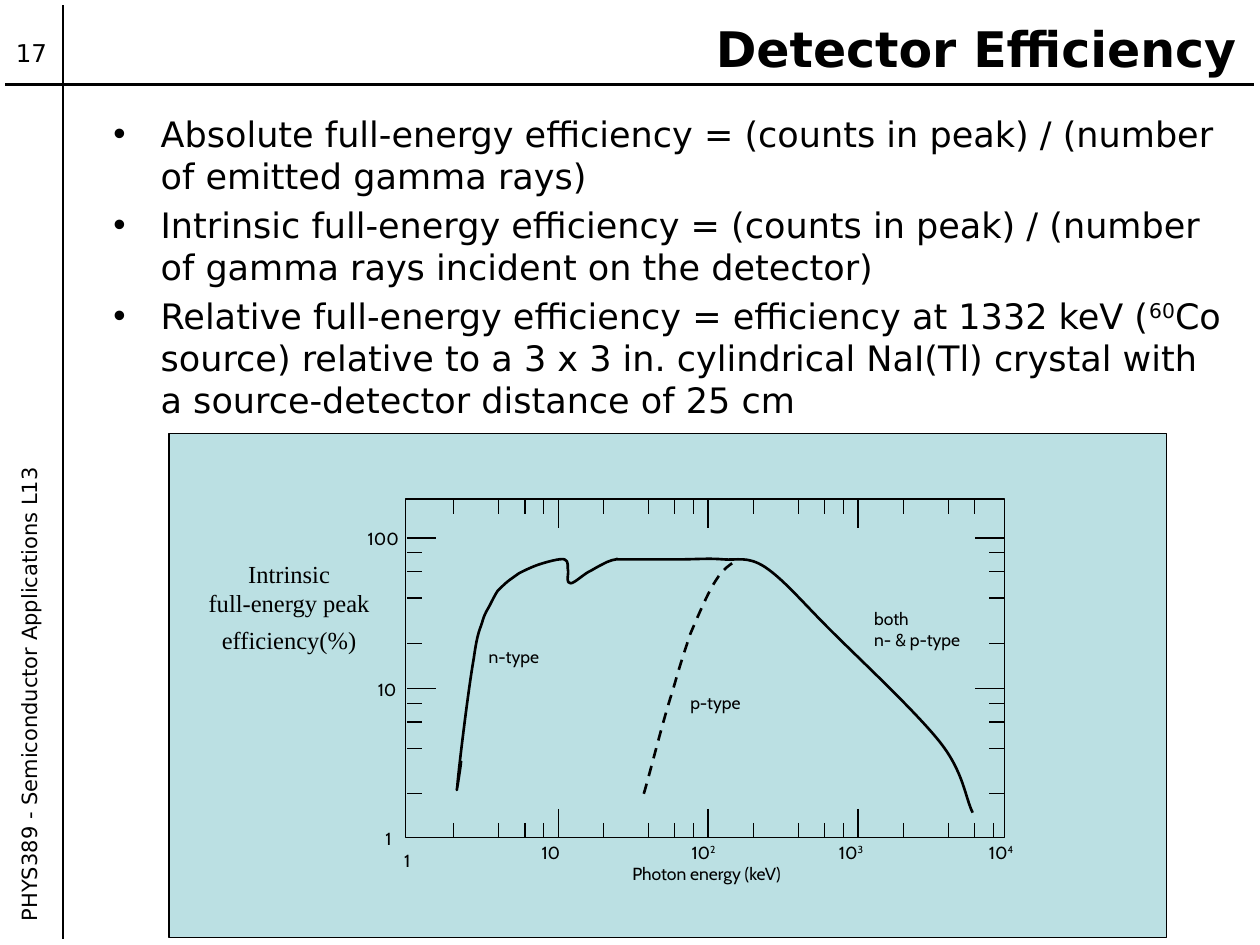
from dataclasses import dataclass
from math import log10

from lxml.etree import SubElement
from pptx import Presentation
from pptx.dml.color import RGBColor as Rgb
from pptx.enum.dml import MSO_LINE as Dash
from pptx.enum.shapes import MSO_CONNECTOR as Conn, MSO_SHAPE as Kind
from pptx.enum.text import MSO_ANCHOR as Anchor, MSO_AUTO_SIZE as Fit, PP_ALIGN as Align
from pptx.oxml.ns import qn
from pptx.util import Pt

PX = 9144  # 100 px to the inch


@dataclass(frozen=True)
class Theme:
    ink: Rgb = Rgb(0, 0, 0)
    panel: Rgb = Rgb(0xBB, 0xE0, 0xE3)
    sans: str = "DejaVu Sans"
    serif: str = "Times New Roman"
    label: str = "Cabin"
    title: int = 28
    body: int = 20
    axis: int = 14
    side: int = 12
    small: int = 10
    thin: float = 0.75
    thick: float = 1.5


T = Theme()

BULLETS = [
    "Absolute full-energy efficiency = (counts in peak) / (number of emitted gamma rays)",
    "Intrinsic full-energy efficiency = (counts in peak) / (number of gamma rays "
    "incident on the detector)",
    "Relative full-energy efficiency = efficiency at 1332 keV (^60^Co source) relative "
    "to a 3 x 3 in. cylindrical NaI(Tl) crystal with a source-detector distance of 25 cm",
]

# Curves inside the plot: a start, then two handles and an end for each arc
N_TYPE = (44, 208), [
    (44, 211, 39, 241, 41, 228), (42, 214, 50, 149, 54, 127),
    (57, 105, 59, 104, 61, 97), (63, 90, 65, 88, 67, 84),
    (69, 80, 71, 76, 73, 73), (76, 70, 80, 66, 83, 64),
    (86, 61, 86, 61, 90, 59), (94, 57, 100, 54, 106, 52),
    (112, 50, 123, 47, 126, 48), (130, 49, 128, 55, 129, 58),
    (129, 61, 127, 67, 131, 67), (134, 67, 142, 59, 147, 57),
    (152, 54, 156, 52, 160, 50), (163, 49, 165, 48, 167, 48),
    (169, 47, 166, 48, 169, 48),
    (172, 48, 177, 48, 185, 48), (193, 48, 206, 48, 218, 48),
    (229, 48, 241, 47, 252, 48), (263, 49, 271, 45, 285, 54),
    (300, 64, 314, 81, 337, 104), (360, 127, 405, 169, 424, 193),
    (443, 217, 444, 237, 450, 249),
]
P_TYPE = (189, 234), [
    (193, 221, 205, 173, 212, 152), (218, 131, 221, 122, 226, 107),
    (232, 93, 240, 74, 246, 65), (252, 55, 258, 52, 262, 49),
]

# Plot labels: text, left, top, width, height
LABELS = [
    ("p-type", 216, 148, 95, 45), ("both\nn- & p-type", 362, 82, 164, 60),
    ("n-type", 56, 112, 92, 36), ("Photon energy (keV)", 170, 284, 231, 39),
    ("1", -26, 256, 62, 33), ("10", -32, 138, 61, 36), ("100", -40, 18, 60, 34),
    ("1", -11, 274, 40, 32), ("10", 98, 267, 45, 32), ("10^2", 217, 267, 60, 35),
    ("10^3", 334, 267, 69, 34), ("10^4", 453, 267, 58, 32),
]


def emu(*vals):
    return [round(v * PX) for v in vals]


def place(shape, box):
    shape.left, shape.top, shape.width, shape.height = emu(*box)


def write(frame, lines, face, size, align=None, bold=None):
    """Fill a frame; text between carets is raised."""
    frame.word_wrap = True
    frame.auto_size = Fit.NONE
    for i, line in enumerate(lines):
        para = frame.add_paragraph() if i else frame.paragraphs[0]
        para.alignment = align
        font = para.font
        font.name, font.size, font.bold = face, Pt(size), bold
        font.color.rgb = T.ink
        for j, part in enumerate(line.split("^")):
            run = para.add_run()
            run.text = part
            if j % 2:
                run._r.get_or_add_rPr().set("baseline", "30000")


def text(slide, box, lines, face, size, align=None):
    shape = slide.shapes.add_textbox(*emu(*box))
    write(shape.text_frame, lines, face, size, align)
    return shape


def rule(slide, x1, y1, x2, y2, width):
    line = slide.shapes.add_connector(Conn.STRAIGHT, *emu(x1, y1, x2, y2))
    line.line.color.rgb = T.ink
    line.line.width = Pt(width)
    SubElement(line._element.spPr, qn("a:effectLst"))


def rect(slide, box, fill=None):
    shape = slide.shapes.add_shape(Kind.RECTANGLE, *emu(*box))
    shape.shadow.inherit = False
    if fill is None:
        shape.fill.background()
    else:
        shape.fill.solid()
        shape.fill.fore_color.rgb = fill
    shape.line.color.rgb = T.ink
    shape.line.width = Pt(T.thin)


def curve(slide, box, start, arcs, dash=None):
    """Draw joined cubic arcs."""
    x, y = box[:2]
    dots = [emu(x + arc[i], y + arc[i + 1]) for arc in arcs for i in (0, 2, 4)]
    pen = slide.shapes.build_freeform(*emu(x + start[0], y + start[1]))
    pen.add_line_segments(dots, close=False)
    shape = pen.convert_to_shape()
    # Turn each three straight steps into one cubic arc
    track = next(shape._element.iter(qn("a:path")))
    steps = track.findall(qn("a:lnTo"))
    for i, step in enumerate(steps):
        if i % 3 == 0:
            cubic = SubElement(track, qn("a:cubicBezTo"))
        cubic.append(step[0])
        track.remove(step)
    shape.shadow.inherit = False
    shape.fill.background()
    shape.line.color.rgb = T.ink
    shape.line.width = Pt(T.thick)
    if dash:
        shape.line.dash_style = dash


def ticks(slide, box):
    """Log ticks at 1, 2, 4, 6, 8 of each decade, on all four sides."""
    x, y, w, h = box
    right, base = x + w, y + h
    for dec in range(4):
        for n in (1, 2, 4, 6, 8):
            size = 23 if n == 1 else 12
            step = dec + log10(n)
            across, up = x + 2 + 119 * step, base + 1 - 119.5 * step
            if step > 0:
                rule(slide, across, base - size, across, base, T.thin)
                if step < 3.9:
                    rule(slide, across, y, across, y + size, T.thin)
            if 0 < step <= 2:
                rule(slide, x + 1, up, x + 1 + size, up, T.thin)
                rule(slide, right - size, up, right, up, T.thin)


def plot(slide, box):
    x, y = box[:2]
    rect(slide, box)
    ticks(slide, box)
    curve(slide, box, *N_TYPE)
    curve(slide, box, *P_TYPE, dash=Dash.DASH)
    for words, dx, dy, w, h in LABELS:
        text(slide, (x + dx, y + dy, w, h), words.split("\n"), T.label, T.small)


def panel(slide, box):
    x, y, w, h = box
    rect(slide, box, T.panel)
    plot(slide, (x + 188, y + 52, 475, 269))
    # Name of the upright axis
    name = text(slide, (x + 8, y + 101, 175, 82),
                ["Intrinsic", "full-energy peak", "efficiency(%)"],
                T.serif, T.axis, Align.CENTER)
    for para, gap in zip(name.text_frame.paragraphs, (5, 5, 9)):
        para.line_spacing = 0.7
        para.space_before = Pt(gap)


def border(slide, box):
    """Crossing rules, page number and upright course name."""
    x, y, w, h = box
    rule(slide, x + 4, y + 67, x + w - 5, y + 67, T.thick)
    rule(slide, x + 50, y + 4, x + 50, y + h - 5, T.thick)
    side = text(slide, (x - 242, y + 458, 533, 33),
                ["PHYS389 - Semiconductor Applications L13"], T.sans, T.side)
    side.rotation = 270
    text(slide, (x, y + 25, 50, 33), ["17"], T.sans, T.axis, Align.CENTER)


def head(slide, box):
    title = slide.shapes.title
    place(title, box)
    write(title.text_frame, ["Detector Efficiency"], T.sans, T.title, Align.RIGHT, True)
    title.text_frame.vertical_anchor = Anchor.MIDDLE


def points(slide, box):
    body = slide.placeholders[1]
    place(body, box)
    write(body.text_frame, BULLETS, T.sans, T.body)


def main():
    deck = Presentation()
    deck.slide_width, deck.slide_height = emu(1000, 750)
    slide = deck.slides.add_slide(deck.slide_layouts[1])
    border(slide, (0, 0, 1000, 750))
    head(slide, (58, 17, 933, 42))
    points(slide, (80, 84, 900, 495))
    panel(slide, (134, 344, 792, 400))
    deck.save("out.pptx")


if __name__ == "__main__":
    main()
